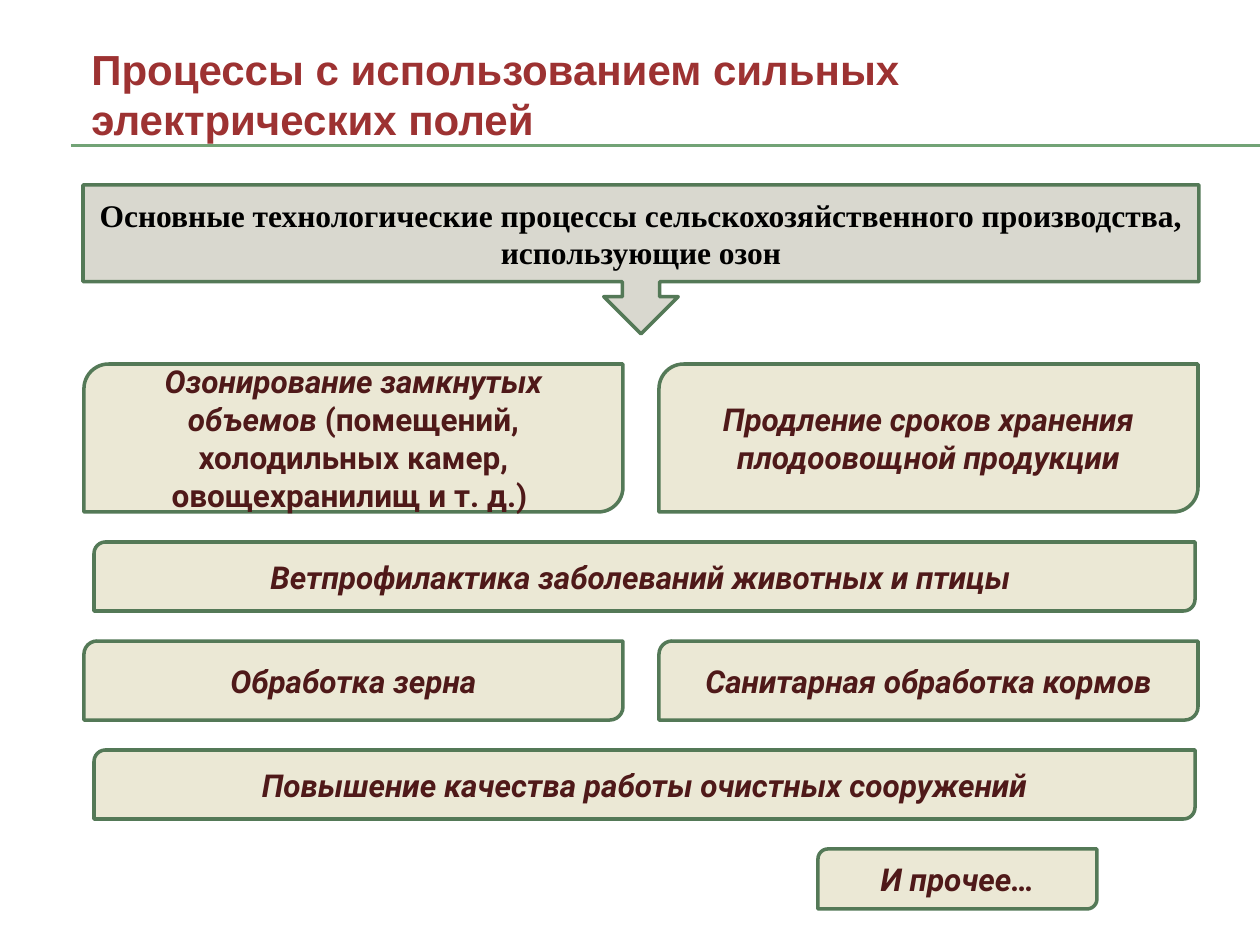
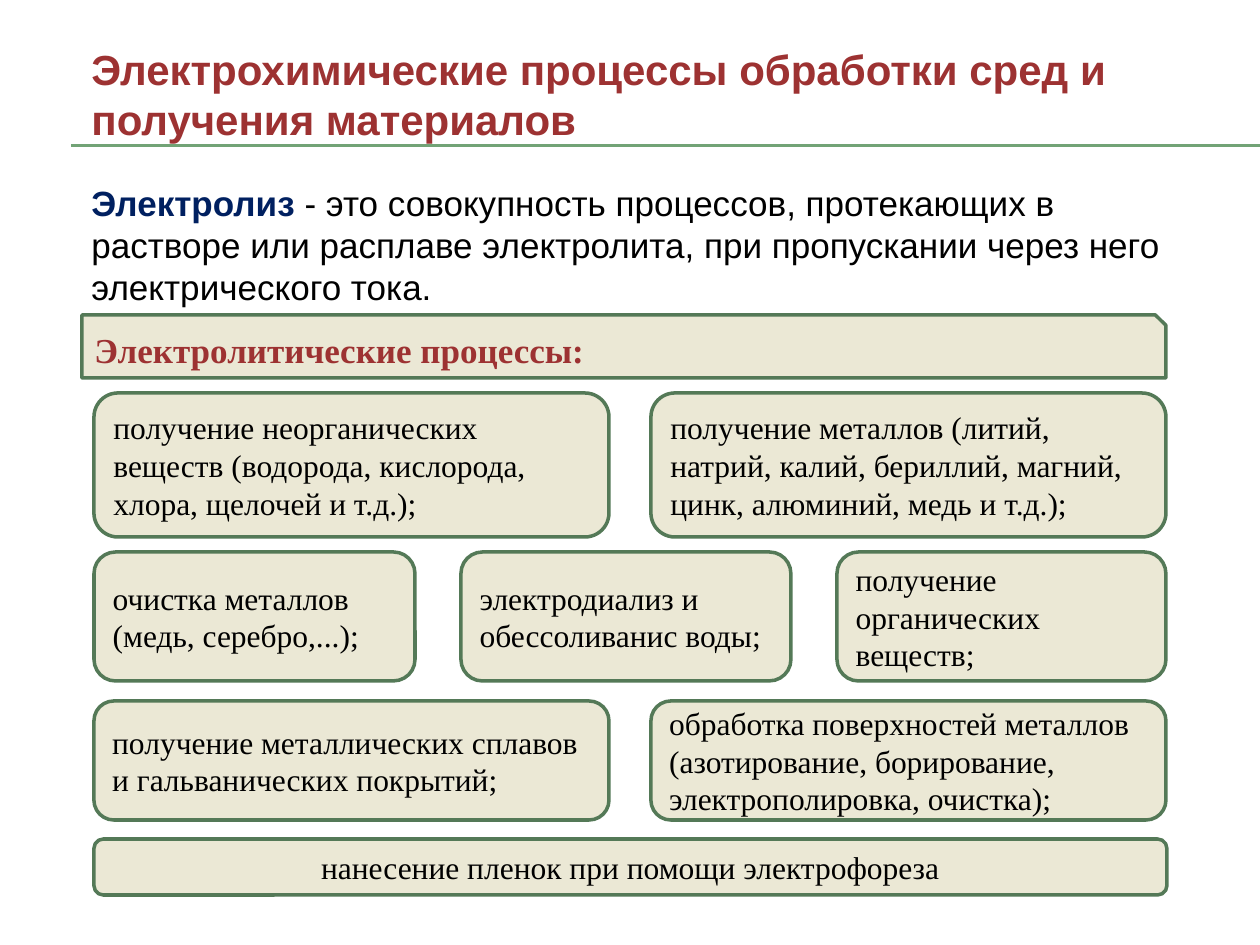
from lxml.etree import SubElement
from pptx import Presentation
from pptx.dml.color import RGBColor
from pptx.enum.shapes import MSO_CONNECTOR, MSO_SHAPE
from pptx.enum.text import MSO_ANCHOR, PP_ALIGN
from pptx.oxml.ns import qn
from pptx.util import Emu, Pt

PX_PER_INCH = 126
SLIDE_W, SLIDE_H = 1260, 945

HEADING_RED = RGBColor(0x9D, 0x32, 0x32)
RULE_GREEN = RGBColor(0x72, 0xA3, 0x76)
BORDER_GREEN = RGBColor(0x54, 0x79, 0x57)
CARD_CREAM = RGBColor(0xEB, 0xE8, 0xD5)
CALLOUT_GREY = RGBColor(0xD9, 0xD8, 0xCF)
CARD_BROWN = RGBColor(0x4F, 0x19, 0x19)
TERM_NAVY = RGBColor(0x00, 0x20, 0x60)
BLACK = RGBColor(0, 0, 0)

OZONE_CARD = dict(font="Roboto", color=CARD_BROWN, bold=True, italic=True, align=PP_ALIGN.CENTER)
PROCESS_CARD = dict(font="Times New Roman")


def px(length):
    return Emu(round(length * 914400 / PX_PER_INCH))


def write_text(holder, *runs, font="Arial", size=18, color=BLACK, bold=False, italic=False,
               align=PP_ALIGN.LEFT, anchor=MSO_ANCHOR.MIDDLE):
    frame = holder.text_frame
    frame.word_wrap = True
    frame.vertical_anchor = anchor
    paragraph = frame.paragraphs[0]
    paragraph.alignment = align
    for content, changes in runs:
        style = dict(color=color, bold=bold, italic=italic) | changes
        run = paragraph.add_run()
        run.text = content
        run.font.name = font
        run.font.size = Pt(size)
        run.font.color.rgb = style["color"]
        run.font.bold = style["bold"]
        run.font.italic = style["italic"]


def add_passage(slide, box, *runs, **style):
    passage = slide.shapes.add_textbox(*map(px, box))
    write_text(passage, *runs, anchor=MSO_ANCHOR.TOP, **style)


def add_card(slide, outline, box, *runs, fill=CARD_CREAM, **style):
    card = slide.shapes.add_shape(outline, *map(px, box))
    card.shadow.inherit = False
    card.fill.solid()
    card.fill.fore_color.rgb = fill
    card.line.color.rgb = BORDER_GREEN
    card.line.width = Pt(2)
    write_text(card, *runs, **style)


def add_card_row(slide, outline, box, cards, gap=0, widths=None, **style):
    left, top, width, height = box
    equal = (width - gap * (len(cards) - 1)) // len(cards)
    for runs, card_width in zip(cards, widths or [equal] * len(cards)):
        add_card(slide, outline, (left, top, card_width, height), *runs, **style)
        left += card_width + gap


def add_header(slide, box, title):
    left, top, width, height = box
    for rule_y in (top + 108, top + 109):
        rule = slide.shapes.add_connector(
            MSO_CONNECTOR.STRAIGHT, px(left - 8), px(rule_y), px(SLIDE_W), px(rule_y))
        rule.line.color.rgb = RULE_GREEN
        rule.line.width = Pt(0.75)
        SubElement(rule._element.spPr, qn("a:effectLst"))
    add_passage(slide, box, (title, {}), size=24, color=HEADING_RED, bold=True)


def add_topic_slide(deck, title):
    slide = deck.slides.add_slide(deck.slide_layouts[6])
    add_header(slide, (79, 37, 1071, 115), title)
    return slide


def add_ozone_cards(slide, box):
    left, top, width, height = box
    rows = [
        (0, 0, width, 148, [
            [("Озонирование замкнутых объемов", {}),
             (" (помещений, холодильных камер, овощехранилищ и т. д.) ", {"italic": False})],
            [("Продление сроков хранения плодоовощной продукции", {})]]),
        (10, 178, width - 14, 69, [[("Ветпрофилактика заболеваний животных и птицы ", {})]]),
        (0, 277, width, 79, [
            [("Обработка зерна", {})],
            [("Санитарная обработка кормов", {})]]),
        (10, 386, width - 14, 69, [[("Повышение качества работы очистных сооружений", {})]]),
        (734, 485, 279, 60, [[("И прочее…", {})]]),
    ]
    for indent, offset, row_width, row_height, cards in rows:
        add_card_row(slide, MSO_SHAPE.ROUND_2_DIAG_RECTANGLE,
                     (left + indent, top + offset, row_width, row_height),
                     cards, gap=36, **OZONE_CARD)


def add_electrolytic_cards(slide, box):
    left, top, width, height = box
    rows = [
        (0, 144, 42, None, PP_ALIGN.LEFT, [
            "получение неорганических веществ (водорода, кислорода, хлора, щелочей и т.д.);",
            "получение металлов (литий, натрий, калий, бериллий, магний, цинк, алюминий, медь и т.д.);"]),
        (159, 129, 46, (321, 330, 329), PP_ALIGN.LEFT, [
            "очистка металлов (медь, серебро,...);",
            "электродиализ и обессоливанис воды;",
            "получение органических веществ;"]),
        (308, 119, 42, None, PP_ALIGN.LEFT, [
            "получение металлических сплавов и гальванических покрытий;",
            "обработка поверхностей металлов (азотирование, борирование, электрополировка, очистка);"]),
        (446, 56, 0, None, PP_ALIGN.CENTER, ["нанесение пленок при помощи электрофореза"]),
    ]
    for offset, row_height, gap, widths, align, processes in rows:
        add_card_row(slide, MSO_SHAPE.ROUNDED_RECTANGLE,
                     (left, top + offset, width, row_height),
                     [[(process, {})] for process in processes],
                     gap=gap, widths=widths, align=align, **PROCESS_CARD)


def build_ozone_slide(deck):
    slide = add_topic_slide(deck, "Процессы с использованием сильных электрических полей")
    add_card(slide, MSO_SHAPE.DOWN_ARROW_CALLOUT, (83, 185, 1116, 149),
             ("Основные технологические процессы сельскохозяйственного производства, "
              "использующие озон", {}),
             fill=CALLOUT_GREY, font="Times New Roman", bold=True, align=PP_ALIGN.CENTER)
    add_ozone_cards(slide, (84, 364, 1115, 545))


def build_electrolysis_slide(deck):
    slide = add_topic_slide(deck, "Электрохимические процессы обработки сред и получения материалов")
    add_passage(slide, (79, 175, 1126, 140),
                ("Электролиз", {"color": TERM_NAVY, "bold": True}),
                (" - это совокупность процессов, протекающих в растворе или расплаве электролита, "
                 "при пропускании через него электрического тока.", {}), size=20)
    add_card(slide, MSO_SHAPE.SNIP_1_RECTANGLE, (82, 315, 1084, 63),
             ("Электролитические процессы:", {}),
             font="Times New Roman", size=20, color=HEADING_RED, bold=True)
    add_electrolytic_cards(slide, (94, 393, 1073, 502))


def main():
    deck = Presentation()
    deck.slide_width, deck.slide_height = px(SLIDE_W), px(SLIDE_H)
    build_ozone_slide(deck)
    build_electrolysis_slide(deck)
    deck.save("out.pptx")


if __name__ == "__main__":
    main()
